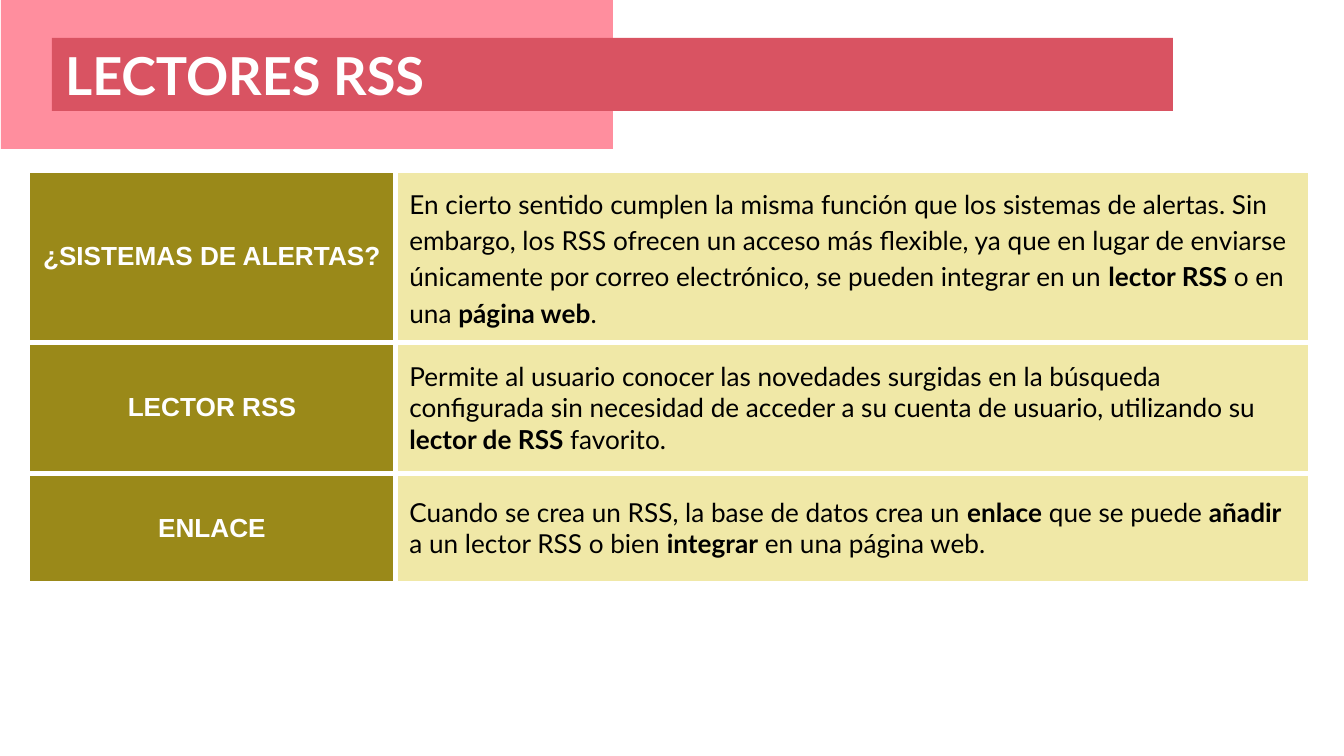
import pptx
import pptx.dml.color
import pptx.enum.shapes
import pptx.enum.text
import pptx.oxml
import pptx.oxml.ns
import pptx.util

PX = 914400 / 134.4
MARGIN = 0.1
ROSE, CRIMSON, OLIVE, CREAM = "FF8E9E", "D95362", "9A8919", "F0E8A7"
WHITE, BLACK = "FFFFFF", "000000"

TITLE = "LECTORES RSS"
BACKDROP_BOX = (1, 0, 612, 149)
TITLE_BOX = (52, 38, 1121, 73)
TABLE_LEFT, TABLE_TOP = 28, 171
COLUMN_WIDTHS = (368, 915)

# Row height, heading, and description as (text, bold) pieces
ROWS = [
    (171, "¿SISTEMAS DE ALERTAS?", [
        ("En cierto sentido cumplen la misma función que los sistemas de alertas. "
         "Sin embargo, los RSS ofrecen un acceso más flexible, ya que en lugar de "
         "enviarse únicamente por correo electrónico, se pueden integrar en un ", False),
        ("lector RSS ", True), ("o en una ", False), ("página web", True), (".", False)]),
    (131, "LECTOR RSS", [
        ("Permite al usuario conocer las novedades surgidas en la búsqueda configurada "
         "sin necesidad de acceder a su cuenta de usuario, utilizando su ", False),
        ("lector de RSS ", True), ("favorito.", False)]),
    (110, "ENLACE", [
        ("Cuando se crea un RSS, la base de datos crea un ", False), ("enlace", True),
        (" que se puede ", False), ("añadir", True), (" a un lector RSS o bien ", False),
        ("integrar", True), (" en una página web.", False)]),
]


def px(length):
    return round(length * PX)


def rgb(color):
    return pptx.dml.color.RGBColor.from_string(color)


def paint(part, color):
    part.fill.solid()
    part.fill.fore_color.rgb = rgb(color)


def set_margins(part):
    for side in ("left", "right", "top", "bottom"):
        setattr(part, f"margin_{side}", pptx.util.Inches(MARGIN))
    part.vertical_anchor = pptx.enum.text.MSO_ANCHOR.MIDDLE


def write(paragraph, pieces, font, size, color, align):
    paragraph.alignment = align
    for text, bold in pieces:
        run = paragraph.add_run()
        run.text = text
        run.font.name = font
        run.font.size = pptx.util.Pt(size)
        run.font.bold = bold
        run.font.color.rgb = rgb(color)


def add_band(slide, box, color):
    band = slide.shapes.add_shape(
        pptx.enum.shapes.MSO_SHAPE.RECTANGLE, *map(px, box))
    band.shadow.inherit = False
    paint(band, color)
    band.line.fill.background()
    return band


def add_borders(cell, color, points):
    """Draw all four borders; they must precede the fill in the cell properties."""
    properties = cell._tc.get_or_add_tcPr()
    for index, side in enumerate(("lnL", "lnR", "lnT", "lnB")):
        properties.insert(index, pptx.oxml.parse_xml(
            f'<a:{side} {pptx.oxml.ns.nsdecls("a")} w="{pptx.util.Pt(points)}">'
            f'<a:solidFill><a:srgbClr val="{color}"/></a:solidFill></a:{side}>'))


def add_definitions(slide):
    heights = [height for height, _, _ in ROWS]
    table = slide.shapes.add_table(
        len(ROWS), len(COLUMN_WIDTHS), px(TABLE_LEFT), px(TABLE_TOP),
        px(sum(COLUMN_WIDTHS)), px(sum(heights))).table
    for column, width in zip(table.columns, COLUMN_WIDTHS):
        column.width = px(width)
    align = pptx.enum.text.PP_ALIGN
    for row, (height, heading, description) in zip(table.rows, ROWS):
        row.height = px(height)
        styles = (
            ([(heading, True)], "Arial", WHITE, align.CENTER, OLIVE),
            (description, "Lato", BLACK, align.LEFT, CREAM),
        )
        for cell, (pieces, font, color, side, fill) in zip(row.cells, styles):
            paint(cell, fill)
            add_borders(cell, WHITE, 3)
            set_margins(cell)
            write(cell.text_frame.paragraphs[0], pieces, font, 14, color, side)
    opening = table.cell(0, 1).text_frame.paragraphs[0]
    opening.line_spacing = 1.15
    opening.space_after = pptx.util.Pt(10)


def main():
    deck = pptx.Presentation()
    deck.slide_width, deck.slide_height = px(1344), px(756)
    slide = deck.slides.add_slide(deck.slide_layouts[6])

    add_band(slide, BACKDROP_BOX, ROSE)
    title = add_band(slide, TITLE_BOX, CRIMSON).text_frame
    set_margins(title)
    write(title.paragraphs[0], [(TITLE, True)], "Lato", 28, WHITE,
          pptx.enum.text.PP_ALIGN.LEFT)
    add_definitions(slide)

    deck.save("out.pptx")


if __name__ == "__main__":
    main()
